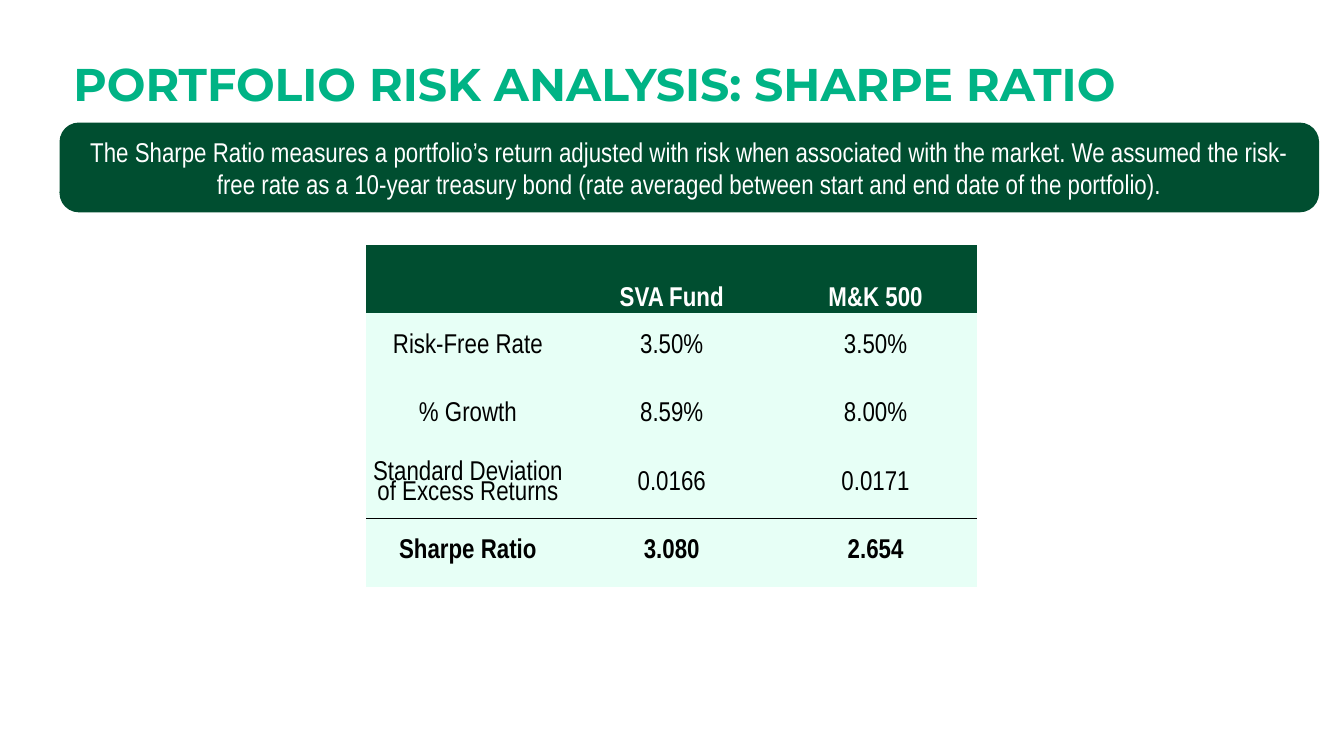
from dataclasses import dataclass

from lxml import etree
from pptx import Presentation
from pptx import util as u
from pptx.dml.color import RGBColor
from pptx.enum import shapes, text
from pptx.oxml import ns
from pptx.slide import Slide
from pptx.table import Table, _Cell
from pptx.text.text import TextFrame


@dataclass(frozen=True)
class Theme:
    title_font: str = "Montserrat"
    body_font: str = "Arial Narrow"
    title_size: int = 54
    body_size: int = 32
    green: str = "00B385"
    dark_green: str = "004E30"
    mint: str = "E7FFF6"
    white: str = "FFFFFF"
    black: str = "000000"


@dataclass(frozen=True)
class TableRow:
    labels: tuple[str, str, str]
    height: float = 2.85
    fill: str = Theme.mint
    color: str = Theme.black
    bold: bool = False
    anchor: text.MSO_ANCHOR = text.MSO_ANCHOR.MIDDLE
    rule: str = ""  # side that carries the total line


THEME = Theme()
NO_GRID_STYLE = "{2D5ABB26-0587-4C30-8999-92F81FD0307C}"
COLUMN_WIDTH = 8.47

ROWS = (
    TableRow(("", "SVA Fund", "M&K 500"), 2.82, THEME.dark_green, THEME.white,
             True, text.MSO_ANCHOR.BOTTOM),
    TableRow(("Risk-Free Rate", "3.50%", "3.50%")),
    TableRow(("% Growth", "8.59%", "8.00%")),
    TableRow(("Standard Deviation of Excess Returns", "0.0166", "0.0171"), rule="lnB"),
    TableRow(("Sharpe Ratio", "3.080", "2.654"), bold=True, rule="lnT"),
)


def format_text(frame: TextFrame, font: str, size: int, color: str, bold: bool,
                align: text.PP_ALIGN, spacing: float = 1.0) -> None:
    for para in frame.paragraphs:
        para.alignment = align
        para.line_spacing = spacing
        for span in para.runs:
            span.font.name = font
            span.font.size = u.Pt(size)
            span.font.bold = bold
            span.font.color.rgb = RGBColor.from_string(color)


def add_title(page: Slide, wording: str) -> None:
    title = page.shapes.title
    title.left, title.top = u.Cm(2.79), u.Cm(1.7)
    title.width, title.height = u.Cm(50.27), u.Cm(3)
    frame = title.text_frame
    frame.text = wording
    frame.auto_size = text.MSO_AUTO_SIZE.NONE
    frame.vertical_anchor = text.MSO_ANCHOR.BOTTOM
    format_text(frame, THEME.title_font, THEME.title_size, THEME.green, True,
                text.PP_ALIGN.LEFT, 0.8)


def add_banner(page: Slide, wording: str) -> None:
    box = page.shapes.add_shape(shapes.MSO_SHAPE.ROUNDED_RECTANGLE,
                                u.Cm(2.51), u.Cm(5.13), u.Cm(52.27), u.Cm(3.66))
    box.adjustments[0] = 0.21
    box.shadow.inherit = False
    box.fill.solid()
    box.fill.fore_color.rgb = RGBColor.from_string(THEME.dark_green)
    box.line.color.rgb = RGBColor.from_string(THEME.dark_green)
    box.line.width = u.Pt(2)
    frame = box.text_frame
    frame.text = wording
    frame.word_wrap = True
    frame.vertical_anchor = text.MSO_ANCHOR.MIDDLE
    format_text(frame, THEME.body_font, THEME.body_size, THEME.white, False,
                text.PP_ALIGN.CENTER)


def add_rule(cell: _Cell, side: str) -> None:
    line = etree.Element(ns.qn(f"a:{side}"), w=str(u.Pt(1)))
    fill = etree.SubElement(line, ns.qn("a:solidFill"))
    etree.SubElement(fill, ns.qn("a:srgbClr"), val=THEME.black)
    cell._tc.get_or_add_tcPr().insert(0, line)


def fill_row(table: Table, index: int, row: TableRow) -> None:
    table.rows[index].height = u.Cm(row.height)
    for column, label in enumerate(row.labels):
        cell = table.cell(index, column)
        cell.text_frame.text = label
        cell.vertical_anchor = row.anchor
        cell.fill.solid()
        cell.fill.fore_color.rgb = RGBColor.from_string(row.fill)
        format_text(cell.text_frame, THEME.body_font, THEME.body_size, row.color,
                    row.bold, text.PP_ALIGN.CENTER, 0.77)
        if row.rule:
            add_rule(cell, row.rule)


def add_ratio_table(page: Slide) -> None:
    columns = len(ROWS[0].labels)
    height = sum(row.height for row in ROWS)
    table = page.shapes.add_table(len(ROWS), columns, u.Cm(15.21), u.Cm(10.19),
                                  u.Cm(columns * COLUMN_WIDTH), u.Cm(height)).table
    table.horz_banding = False
    table._tbl.tblPr.find(ns.qn("a:tableStyleId")).text = NO_GRID_STYLE
    for column in table.columns:
        column.width = u.Cm(COLUMN_WIDTH)
    for index, row in enumerate(ROWS):
        fill_row(table, index, row)


def main() -> None:
    deck = Presentation()
    deck.slide_width, deck.slide_height = u.Cm(55.85), u.Cm(31.42)
    page = deck.slides.add_slide(deck.slide_layouts.get_by_name("Title Only"))

    # Heading and definition
    add_title(page, "PORTFOLIO RISK ANALYSIS: SHARPE RATIO")
    add_banner(page, "The Sharpe Ratio measures a portfolio’s return adjusted with risk "
                     "when associated with the market. We assumed the risk-free rate as a "
                     "10-year treasury bond (rate averaged between start and end date of "
                     "the portfolio).")

    # Fund against the market
    add_ratio_table(page)

    deck.save("out.pptx")


if __name__ == "__main__":
    main()
